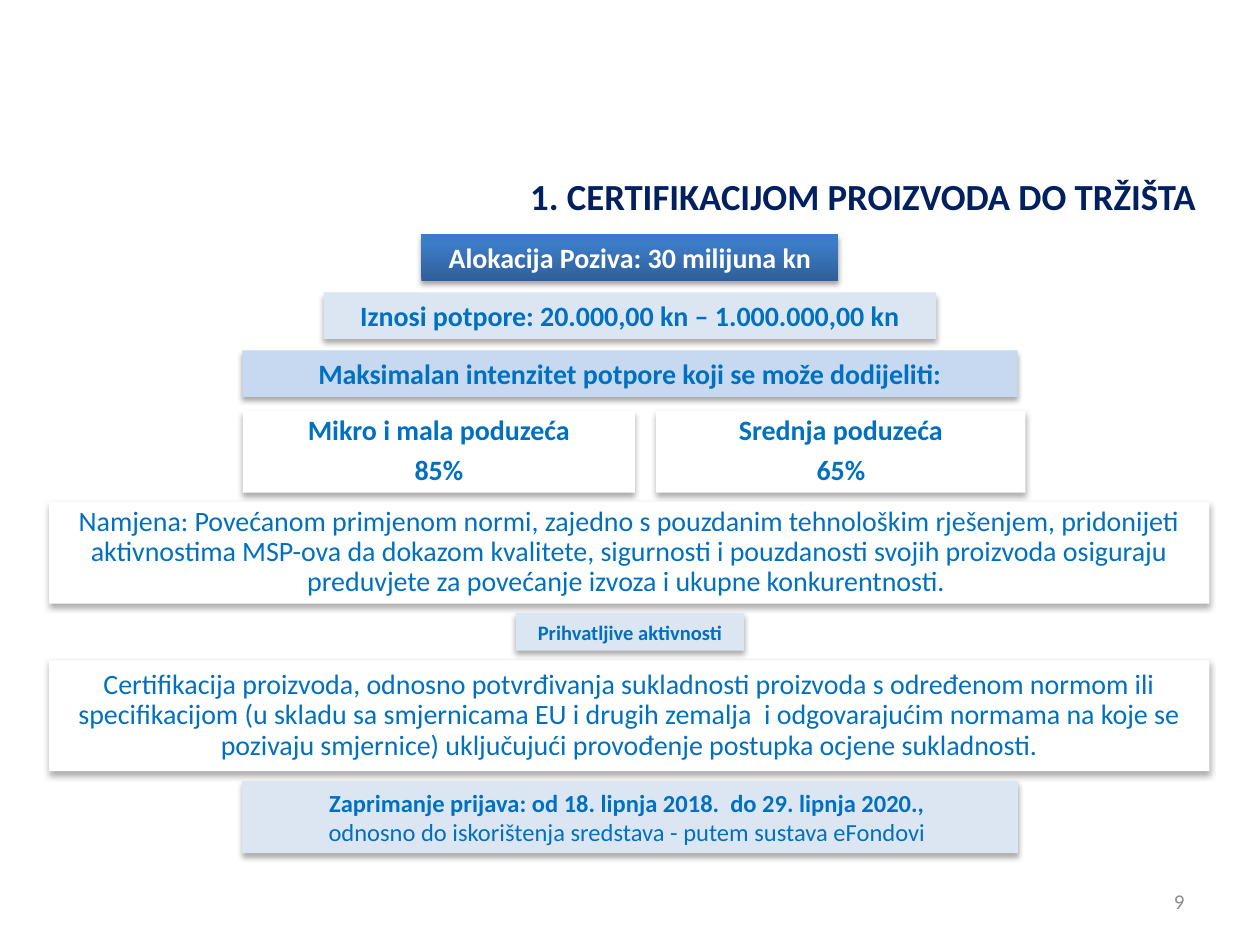
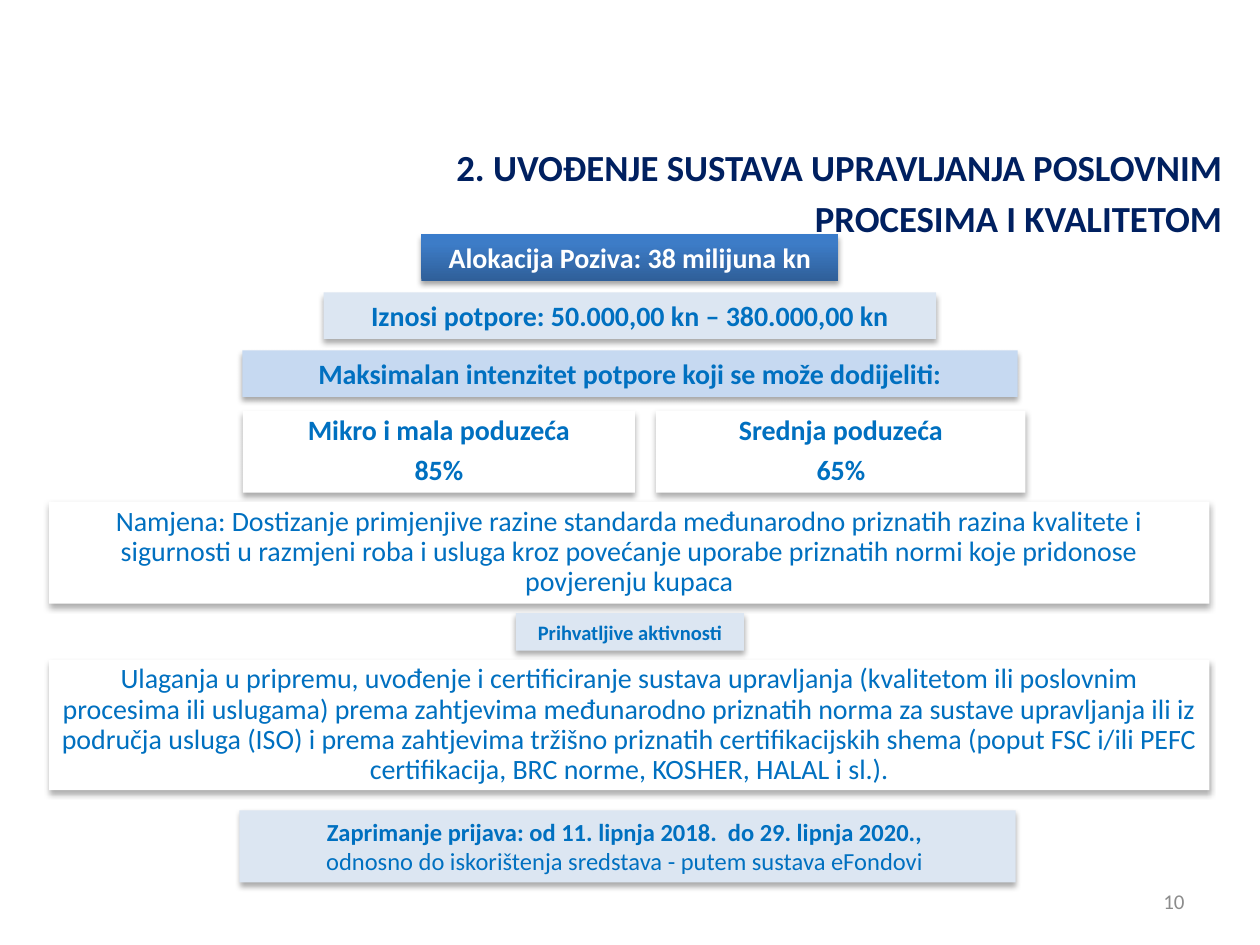
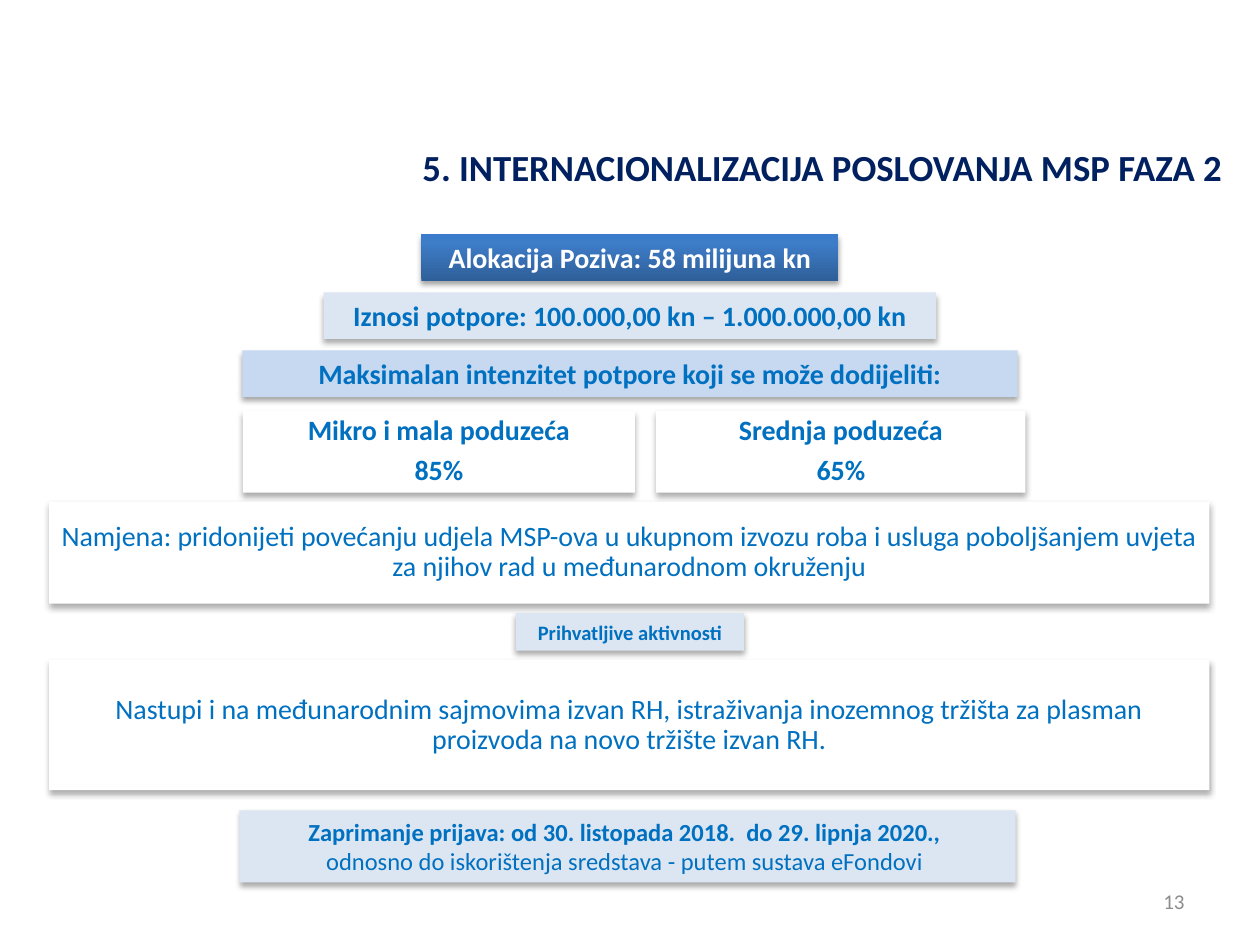
from copy import deepcopy
from dataclasses import dataclass

from lxml import etree
from pptx import Presentation
from pptx.dml.color import RGBColor
from pptx.enum.shapes import MSO_SHAPE
from pptx.enum.text import MSO_ANCHOR, PP_ALIGN
from pptx.oxml.ns import qn
from pptx.util import Pt

RECT = MSO_SHAPE.RECTANGLE
CENTER, RIGHT = PP_ALIGN.CENTER, PP_ALIGN.RIGHT
TOP, MIDDLE = MSO_ANCHOR.TOP, MSO_ANCHOR.MIDDLE

WHITE = RGBColor(0xFF, 0xFF, 0xFF)
BLUE = RGBColor(0x00, 0x70, 0xC0)
NAVY = RGBColor(0x00, 0x20, 0x60)
GRAY = RGBColor(0x8C, 0x8C, 0x8C)
PALE_BLUE = RGBColor(0xDC, 0xE6, 0xF2)
LIGHT_BLUE = RGBColor(0xC6, 0xD9, 0xF1)
BLUE_GRADIENT = (
    (0, RGBColor(0x2F, 0x5F, 0x99)),
    (0.8, RGBColor(0x3D, 0x7C, 0xC7)),
    (1, RGBColor(0x3A, 0x7C, 0xCB)),
)

SLIDE_WIDTH, SLIDE_HEIGHT = 720, 540
FONT = "Calibri"
BODY_SIZE = 16
BAND_TOP, BAND_STEP, BAND_HEIGHT = 133.9, 33.2, 26.6
PANEL_LEFT, PANEL_WIDTH = 28.1, 663
TITLE_WIDTH = 476


@dataclass
class Call:
    """One call for grants, with the places that vary between the slides."""
    title: str
    allocation: str
    amounts: str
    purpose: str
    activities: str
    deadline: str
    number: str
    title_right: float = 705.6
    title_top: float = 75.6
    activities_height: float = 74.2
    deadline_top: float = 463
    deadline_center: float = 358.6


class Deck:
    def __init__(self):
        self.presentation = Presentation()
        self.presentation.slide_width = Pt(SLIDE_WIDTH)
        self.presentation.slide_height = Pt(SLIDE_HEIGHT)
        self.slide = None

    def new_slide(self):
        blank = self.presentation.slide_layouts[6]
        self.slide = self.presentation.slides.add_slide(blank)

    def set_text(self, shape, lines, size, color, align=CENTER, anchor=MIDDLE,
                 spacing=None, gap=0, inset=7.2):
        """Fill a shape with one paragraph for each (text, bold) pair."""
        frame = shape.text_frame
        frame.word_wrap = True
        frame.vertical_anchor = anchor
        frame.margin_left = frame.margin_right = Pt(inset)
        frame.margin_top = frame.margin_bottom = Pt(3.6)
        for index, (text, bold) in enumerate(lines):
            paragraph = frame.add_paragraph() if index else frame.paragraphs[0]
            paragraph.alignment = align
            paragraph.line_spacing = spacing
            if index:
                paragraph.space_before = Pt(gap)
            run = paragraph.add_run()
            run.text = text
            run.font.name = FONT
            run.font.size = Pt(size)
            run.font.bold = bold
            run.font.color.rgb = color

    def shade(self, shape, alpha, blur, distance):
        """Give the shape a black shadow that falls straight down."""
        shape.shadow.inherit = False
        effects = shape._element.spPr.find(qn("a:effectLst"))
        shadow = etree.SubElement(
            effects, qn("a:outerShdw"), blurRad=str(Pt(blur)),
            dist=str(Pt(distance)), dir="5400000", rotWithShape="0")
        black = etree.SubElement(shadow, qn("a:srgbClr"), val="000000")
        etree.SubElement(black, qn("a:alpha"), val=str(alpha * 1000))

    def paint_gradient(self, shape, stops):
        shape.fill.gradient()
        shape.fill.gradient_angle = 90
        stop_list = shape._element.spPr.find(qn("a:gradFill")).find(qn("a:gsLst"))
        while len(stop_list) < len(stops):
            stop_list.append(deepcopy(stop_list[-1]))
        for stop, (position, color) in zip(shape.fill.gradient_stops, stops):
            stop.position = position
            stop.color.rgb = color

    def box(self, left, top, width, height, fill, shadow=(32, 3.5, 2.2)):
        shape = self.slide.shapes.add_shape(
            RECT, Pt(left), Pt(top), Pt(width), Pt(height))
        shape.line.fill.background()
        if isinstance(fill, RGBColor):
            shape.fill.solid()
            shape.fill.fore_color.rgb = fill
        else:
            self.paint_gradient(shape, fill)
        self.shade(shape, *shadow)
        return shape

    def band(self, lines, top, width, height=BAND_HEIGHT, fill=PALE_BLUE,
             size=BODY_SIZE, color=BLUE, center=SLIDE_WIDTH / 2, **style):
        """A coloured strip centred on a vertical axis."""
        shape = self.box(center - width / 2, top, width, height, fill, **style)
        self.set_text(shape, lines, size, color)

    def panel(self, lines, top, height, left=PANEL_LEFT, width=PANEL_WIDTH):
        shape = self.box(left, top, width, height, WHITE)
        self.set_text(shape, lines, BODY_SIZE, BLUE, spacing=0.9, gap=5.4, inset=6.5)

    def label(self, text, left, top, width, height, size, color, bold=False, **style):
        shape = self.slide.shapes.add_textbox(
            Pt(left), Pt(top), Pt(width), Pt(height))
        self.set_text(shape, [(text, bold)], size, color, align=RIGHT, **style)

    def call_slide(self, call):
        self.new_slide()
        strong_shadow = (35, 3.1, 1.8)
        allocation_top, amounts_top, intensity_top = (
            BAND_TOP + row * BAND_STEP for row in range(3))
        self.band([(f"Alokacija Poziva: {call.allocation} milijuna kn", True)],
                  allocation_top, 238.4, fill=BLUE_GRADIENT, color=WHITE,
                  shadow=strong_shadow)
        self.band([("Maksimalan intenzitet potpore koji se može dodijeliti:", True)],
                  intensity_top, 443, fill=LIGHT_BLUE, shadow=strong_shadow)
        self.band([(f"Iznosi potpore: {call.amounts}", True)], amounts_top, 350)
        for group, share, left, width in (
                ("Mikro i mala poduzeća", "85%", 138.8, 224),
                ("Srednja poduzeća", "65%", 375, 211)):
            self.panel([(group, True), (share, True)], 234.7, 46.8, left, width)
        self.panel([(f"Namjena: {call.purpose}", False)], 286.6, 58.3)
        self.panel([(call.activities, False)], 377.3, call.activities_height)
        self.band([("Prihvatljive aktivnosti", True)], 350.4, 130.4, 21.5, size=11.7)
        self.band([(f"Zaprimanje prijava: od {call.deadline}  do 29. lipnja 2020., ", True),
                   ("odnosno do iskorištenja sredstava - putem sustava eFondovi ", False)],
                  call.deadline_top, 443.5, 41.2, size=14, center=call.deadline_center)
        self.label(call.title, call.title_right - TITLE_WIDTH, call.title_top,
                   TITLE_WIDTH, 34.6, 21, NAVY, bold=True, anchor=TOP, spacing=1.15)
        self.label(call.number, 516, 500.5, 168, 28.8, 12, GRAY)


CALLS = [
    Call(
        title="1. CERTIFIKACIJOM PROIZVODA DO TRŽIŠTA",
        allocation="30",
        amounts="20.000,00 kn – 1.000.000,00 kn",
        purpose="Povećanom primjenom normi, zajedno s pouzdanim tehnološkim "
                "rješenjem, pridonijeti aktivnostima MSP-ova da dokazom kvalitete, "
                "sigurnosti i pouzdanosti svojih proizvoda osiguraju preduvjete za "
                "povećanje izvoza i ukupne konkurentnosti. ",
        activities="Certifikacija proizvoda, odnosno potvrđivanja sukladnosti proizvoda "
                   "s određenom normom ili specifikacijom (u skladu sa smjernicama EU i "
                   "drugih zemalja  i odgovarajućim normama na koje se pozivaju "
                   "smjernice) uključujući provođenje postupka ocjene sukladnosti.",
        deadline="18. lipnja 2018.",
        number="9",
        title_right=690.5,
        title_top=92.2,
        activities_height=63.4,
        deadline_top=446.4,
        deadline_center=360,
    ),
    Call(
        title="2. UVOĐENJE SUSTAVA UPRAVLJANJA POSLOVNIM PROCESIMA I KVALITETOM",
        allocation="38",
        amounts="50.000,00 kn – 380.000,00 kn",
        purpose="Dostizanje primjenjive razine standarda međunarodno priznatih razina "
                "kvalitete i sigurnosti u razmjeni roba i usluga kroz povećanje uporabe "
                "priznatih normi koje pridonose povjerenju kupaca",
        activities="Ulaganja u pripremu, uvođenje i certificiranje sustava upravljanja "
                   "(kvalitetom ili poslovnim procesima ili uslugama) prema zahtjevima "
                   "međunarodno priznatih norma za sustave upravljanja ili iz područja "
                   "usluga (ISO) i prema zahtjevima tržišno priznatih certifikacijskih "
                   "shema (poput FSC i/ili PEFC certifikacija, BRC norme, KOSHER, HALAL "
                   "i sl.).",
        deadline="11. lipnja 2018.",
        number="10",
    ),
    Call(
        title="5. INTERNACIONALIZACIJA POSLOVANJA MSP FAZA 2",
        allocation="58",
        amounts="100.000,00 kn – 1.000.000,00 kn",
        purpose="pridonijeti povećanju udjela MSP-ova u ukupnom izvozu roba i usluga "
                "poboljšanjem uvjeta za njihov rad u međunarodnom okruženju",
        activities="Nastupi i na međunarodnim sajmovima izvan RH, istraživanja inozemnog "
                   "tržišta za plasman proizvoda na novo tržište izvan RH.",
        deadline="30. listopada 2018.",
        number="13",
    ),
]


def main():
    deck = Deck()
    for call in CALLS:
        deck.call_slide(call)
    deck.presentation.save("out.pptx")


if __name__ == "__main__":
    main()
